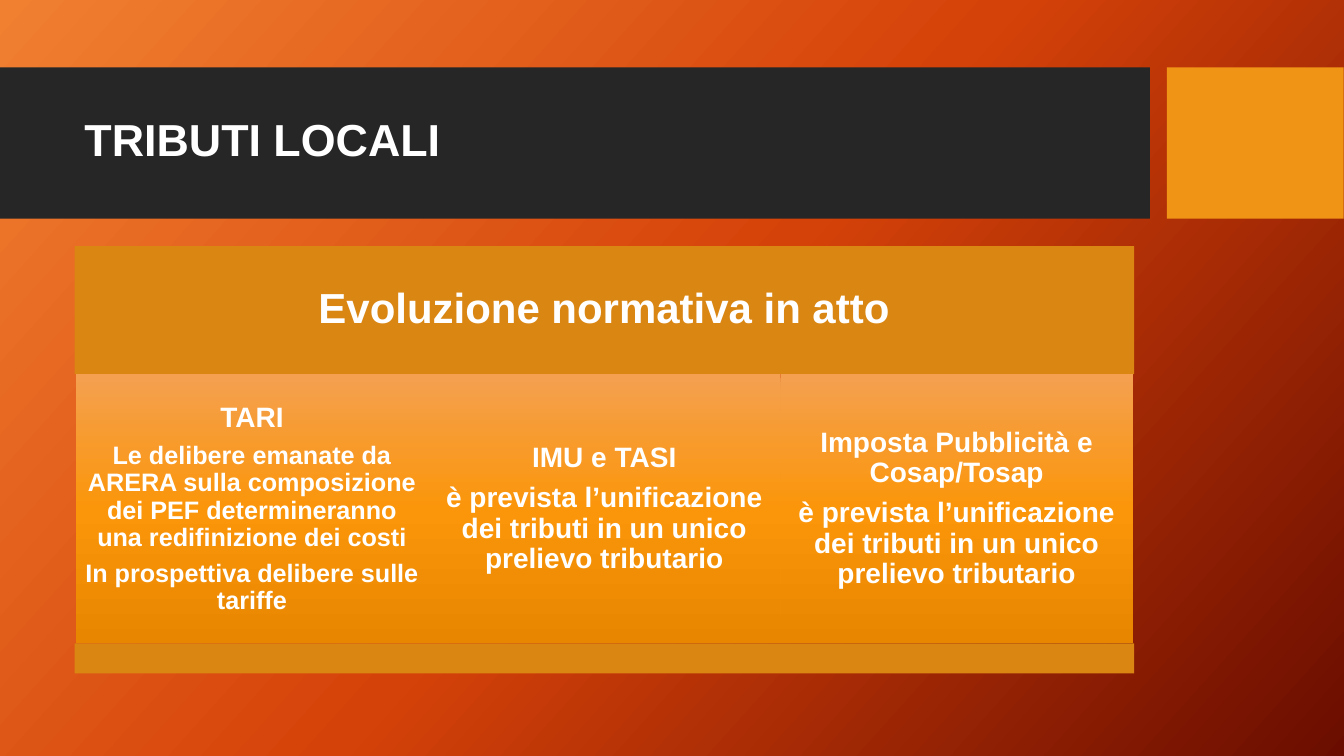
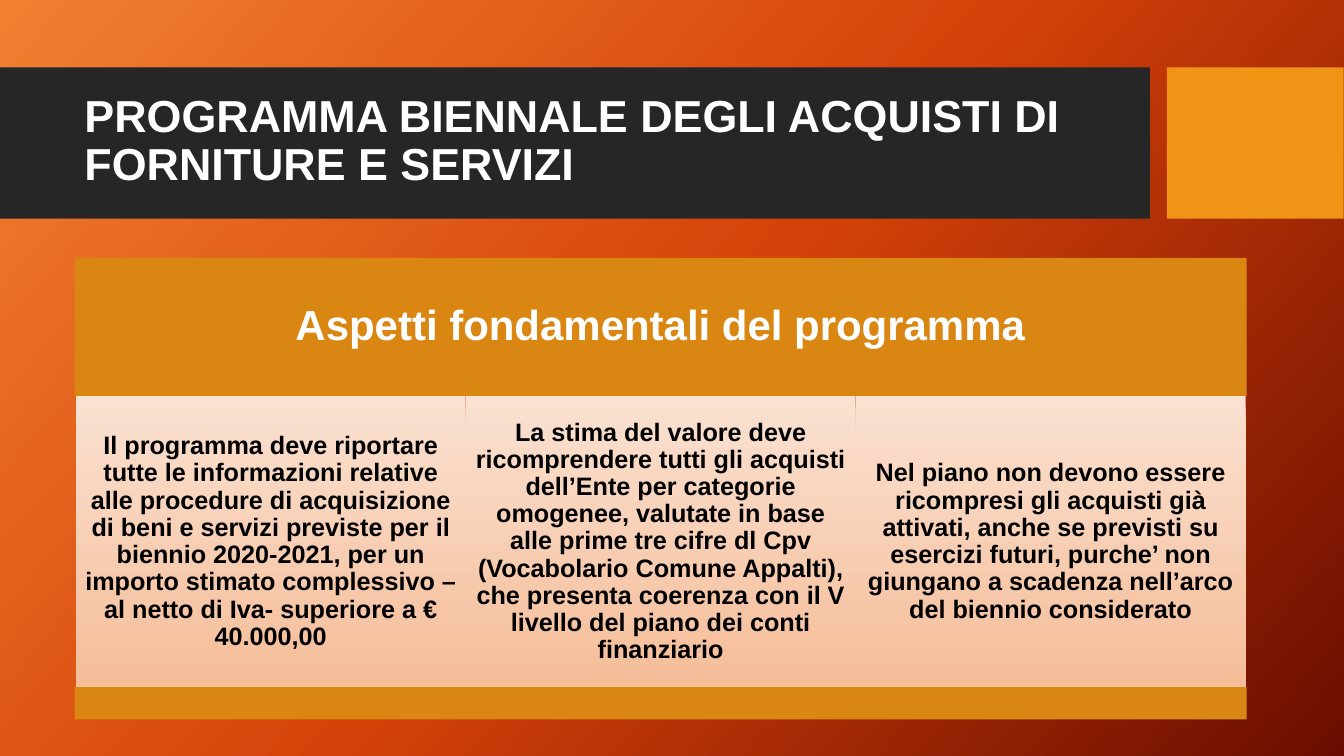
"""Build two slides, each with a title band and a three-column panel."""
from copy import deepcopy
from dataclasses import dataclass

from pptx import Presentation
from pptx import util as u
from pptx.dml import color, fill as dml_fill
from pptx.enum import shapes, text
from pptx.oxml import ns

FONT = "Arial"
WHITE, BLACK = "FFFFFF", "000000"
BAND, ACCENT, PANEL = "262626", "F09415", "DA8613"
BACKDROP = ("F18031", "D54209", "6A0D00")
ORANGE = ("F4A050", "FB960A", "E88600")
PEACH = ("FAE1D1", "F5BD98")
LEFT = 1.88
COLUMN_INSET = 0.03
HEADER_SHARE, BODY_SHARE, FOOTER_SHARE = 0.3, 0.63, 0.07


@dataclass(frozen=True)
class Line:
    wording: str
    size: int


@dataclass(frozen=True)
class Box:
    left: float
    top: float
    width: float
    height: float

    def lengths(self) -> tuple:
        return tuple(u.Cm(v) for v in (self.left, self.top, self.width, self.height))


@dataclass(frozen=True)
class Topic:
    title: str
    heading: str
    columns: tuple[tuple[Line, ...], ...]
    panel: Box
    shades: tuple[str, ...]
    ink: str


UNIFICATION = Line(
    "è prevista l’unificazione dei tributi in un unico prelievo tributario", 20)

TOPICS = (
    Topic(
        "TRIBUTI LOCALI",
        "Evoluzione normativa in atto",
        (
            (Line("TARI", 20),
             Line("Le delibere emanate da ARERA sulla composizione dei PEF "
                  "determineranno una redifinizione dei costi", 18),
             Line("In prospettiva delibere sulle tariffe", 18)),
            (Line("IMU e TASI", 20), UNIFICATION),
            (Line("Imposta Pubblicità e Cosap/Tosap", 20), UNIFICATION),
        ),
        Box(LEFT, 6.2, 26.7, 10.77), ORANGE, WHITE),
    Topic(
        "PROGRAMMA BIENNALE DEGLI ACQUISTI DI FORNITURE E SERVIZI",
        "Aspetti fondamentali del programma",
        (
            (Line("Il programma deve riportare tutte le informazioni relative alle "
                  "procedure di acquisizione di beni e servizi previste per il biennio "
                  "2020-2021, per un importo stimato complessivo –al netto di Iva- "
                  "superiore a € 40.000,00", 18),),
            (Line("La stima del valore deve ricomprendere tutti gli acquisti dell’Ente "
                  "per categorie omogenee, valutate in base alle prime tre cifre dl Cpv "
                  "(Vocabolario Comune Appalti), che presenta coerenza con il V livello "
                  "del piano dei conti finanziario", 18),),
            (Line("Nel piano non devono essere ricompresi gli acquisti già attivati, "
                  "anche se previsti su esercizi futuri, purche’ non giungano a scadenza "
                  "nell’arco del biennio considerato", 18),),
        ),
        Box(LEFT, 6.5, 29.54, 11.63), PEACH, BLACK),
)


def rgb(code: str) -> color.RGBColor:
    """Turn a hex string into a colour."""
    return color.RGBColor.from_string(code)


def shade(fill: dml_fill.FillFormat, element, colours: tuple[str, ...], clockwise: int) -> None:
    """Apply a gradient with evenly spaced colours."""
    fill.gradient()
    fill.gradient_angle = 360 - clockwise
    stop_list = next(element.iter(ns.qn("a:gsLst")))
    for _ in colours[2:]:
        stop_list.append(deepcopy(stop_list[0]))
    for position, (stop, code) in enumerate(zip(fill.gradient_stops, colours)):
        stop.position = position / (len(colours) - 1)
        stop.color.rgb = rgb(code)


def add_block(slide, box: Box, colours: tuple[str, ...]):
    """Draw a borderless rectangle in one colour or a vertical gradient."""
    block = slide.shapes.add_shape(shapes.MSO_SHAPE.RECTANGLE, *box.lengths())
    block.shadow.inherit = False
    block.line.fill.background()
    if len(colours) > 1:
        shade(block.fill, block.element, colours, 90)
    else:
        block.fill.solid()
        block.fill.fore_color.rgb = rgb(colours[0])
    return block


def write(frame, lines: tuple[Line, ...], ink: str, align: text.PP_ALIGN) -> None:
    """Write bold lines, each followed by a gap in proportion to its size."""
    frame.word_wrap = True
    frame.vertical_anchor = text.MSO_ANCHOR.MIDDLE
    for index, line in enumerate(lines):
        paragraph = frame.add_paragraph() if index else frame.paragraphs[0]
        paragraph.alignment = align
        paragraph.line_spacing = 0.9
        if index < len(lines) - 1:
            paragraph.space_after = u.Pt(0.35 * line.size)
        run = paragraph.add_run()
        run.text = line.wording
        run.font.name = FONT
        run.font.size = u.Pt(line.size)
        run.font.bold = True
        run.font.color.rgb = rgb(ink)


def write_inside(block, lines: tuple[Line, ...], ink: str) -> None:
    """Centre lines in a block whose margins follow the first text size."""
    frame = block.text_frame
    margin = u.Cm(0.01 * lines[0].size)
    frame.margin_left = frame.margin_right = margin
    frame.margin_top = frame.margin_bottom = margin
    write(frame, lines, ink, text.PP_ALIGN.CENTER)


def add_frame(slide, title: str) -> None:
    """Draw the backdrop, bands and title that the slides share."""
    shade(slide.background.fill, slide.element, BACKDROP, 42)
    add_block(slide, Box(0, 1.7, 28.98, 3.81), (BAND,))
    add_block(slide, Box(29.41, 1.7, 4.45, 3.81), (ACCENT,))
    heading = slide.shapes.add_textbox(*Box(LEFT, 2.08, 26.7, 3).lengths())
    write(heading.text_frame, (Line(title, 32),), WHITE, text.PP_ALIGN.LEFT)


def add_panel(slide, topic: Topic) -> None:
    """Draw the heading, the equal columns and the closing strip."""
    panel = topic.panel
    header_height = panel.height * HEADER_SHARE
    body_height = panel.height * BODY_SHARE
    body_top = panel.top + header_height
    header = add_block(slide, Box(panel.left, panel.top, panel.width, header_height), (PANEL,))
    write_inside(header, (Line(topic.heading, 30),), WHITE)

    column_width = (panel.width - 2 * COLUMN_INSET) / len(topic.columns)
    for index, lines in enumerate(topic.columns):
        column_left = panel.left + COLUMN_INSET + index * column_width
        column = add_block(
            slide, Box(column_left, body_top, column_width, body_height), topic.shades)
        write_inside(column, lines, topic.ink)

    add_block(slide, Box(panel.left, body_top + body_height, panel.width,
                         panel.height * FOOTER_SHARE), (PANEL,))


def main() -> None:
    """Build and save the presentation."""
    deck = Presentation()
    deck.slide_width, deck.slide_height = u.Cm(33.87), u.Cm(19.05)
    blank = deck.slide_layouts[6]
    for topic in TOPICS:
        slide = deck.slides.add_slide(blank)
        add_frame(slide, topic.title)
        add_panel(slide, topic)
    deck.save("out.pptx")


if __name__ == "__main__":
    main()
